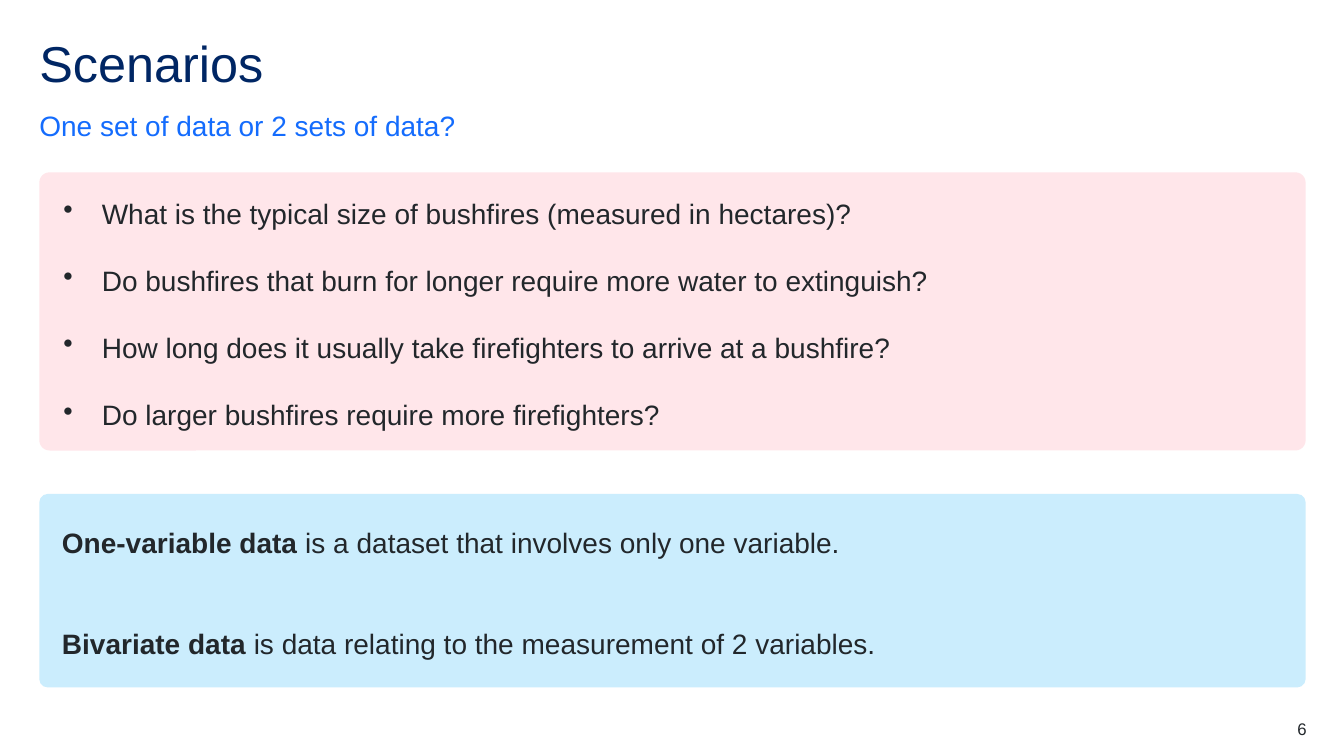
from lxml import etree
from pptx import Presentation
from pptx.dml.color import RGBColor
from pptx.enum.shapes import MSO_SHAPE
from pptx.enum.text import MSO_ANCHOR, PP_ALIGN
from pptx.oxml.ns import qn
from pptx.util import Inches, Pt

ROUND = MSO_SHAPE.ROUNDED_RECTANGLE
TOP, MIDDLE, BOTTOM = MSO_ANCHOR.TOP, MSO_ANCHOR.MIDDLE, MSO_ANCHOR.BOTTOM
LEFT, RIGHT = PP_ALIGN.LEFT, PP_ALIGN.RIGHT

NAVY = RGBColor(0x00, 0x26, 0x64)
BLUE = RGBColor(0x14, 0x6C, 0xFD)
INK = RGBColor(0x22, 0x27, 0x2B)
PINK = RGBColor(0xFF, 0xE6, 0xEA)
SKY = RGBColor(0xCB, 0xED, 0xFD)

MARGIN = 0.39
WIDTH = 12.56

QUESTIONS = [
    "What is the typical size of bushfires (measured in hectares)?",
    "Do bushfires that burn for longer require more water to extinguish?",
    "How long does it usually take firefighters to arrive at a bushfire?",
    "Do larger bushfires require more firefighters?",
]
TERMS = [
    ("One-variable data", " is a dataset that involves only one variable."),
    ("Bivariate data", " is data relating to the measurement of 2 variables."),
]


def add_bullet(para):
    props = para._p.get_or_add_pPr()
    props.set("marL", str(Inches(0.59)))
    props.set("indent", str(Inches(-0.38)))
    etree.SubElement(props, qn("a:buChar")).set("char", "•")


def write(shape, lines, size=20, color=INK, align=LEFT, anchor=TOP,
          spacing=1.5, gap=0, after=0, inset=(0, 0, 0, 0), bullet=False):
    frame = shape.text_frame
    frame.word_wrap = True
    frame.vertical_anchor = anchor
    (frame.margin_left, frame.margin_top,
     frame.margin_right, frame.margin_bottom) = map(Inches, inset)
    for index, (strong, plain) in enumerate(lines):
        para = frame.add_paragraph() if index else frame.paragraphs[0]
        if bullet:
            add_bullet(para)
        para.alignment = align
        para.line_spacing = spacing
        para.space_before = Pt(gap if index else 0)
        para.space_after = Pt(after)
        for text, bold in ((strong, True), (plain, False)):
            if text:
                run = para.add_run()
                run.text = text
                run.font.name = "Arial"
                run.font.size = Pt(size)
                run.font.bold = bold
                run.font.color.rgb = color


def add_label(slide, text, top, height, left=MARGIN, width=WIDTH, **style):
    box = slide.shapes.add_textbox(
        Inches(left), Inches(top), Inches(width), Inches(height))
    write(box, [("", text)], **style)


def add_panel(slide, lines, top, height, fill, corner, **style):
    panel = slide.shapes.add_shape(
        ROUND, Inches(MARGIN), Inches(top), Inches(WIDTH), Inches(height))
    panel.adjustments[0] = corner
    panel.shadow.inherit = False
    panel.fill.solid()
    panel.fill.fore_color.rgb = fill
    panel.line.fill.background()
    write(panel, lines, **style)


def main():
    deck = Presentation()
    deck.slide_width = Inches(13.33)
    deck.slide_height = Inches(7.5)
    slide = deck.slides.add_slide(deck.slide_layouts[6])

    add_label(slide, "Scenarios", 0.39, 0.6, size=36, color=NAVY, spacing=0.9)
    add_label(slide, "One set of data or 2 sets of data?", 1.07, 0.34,
              color=BLUE, anchor=BOTTOM, after=12)
    add_panel(slide, [("", text) for text in QUESTIONS], 1.71, 2.76, PINK,
              0.037, after=12, inset=(0, 0.04, 0, 0), bullet=True)
    add_panel(slide, TERMS, 4.9, 1.92, SKY, 0.044, anchor=MIDDLE, gap=36,
              inset=(0.2, 0, 0, 0.12))
    add_label(slide, "6", 7.13, 0.2, left=12.17, width=0.79,
              size=12, align=RIGHT, spacing=1)
    deck.save("out.pptx")


if __name__ == "__main__":
    main()
